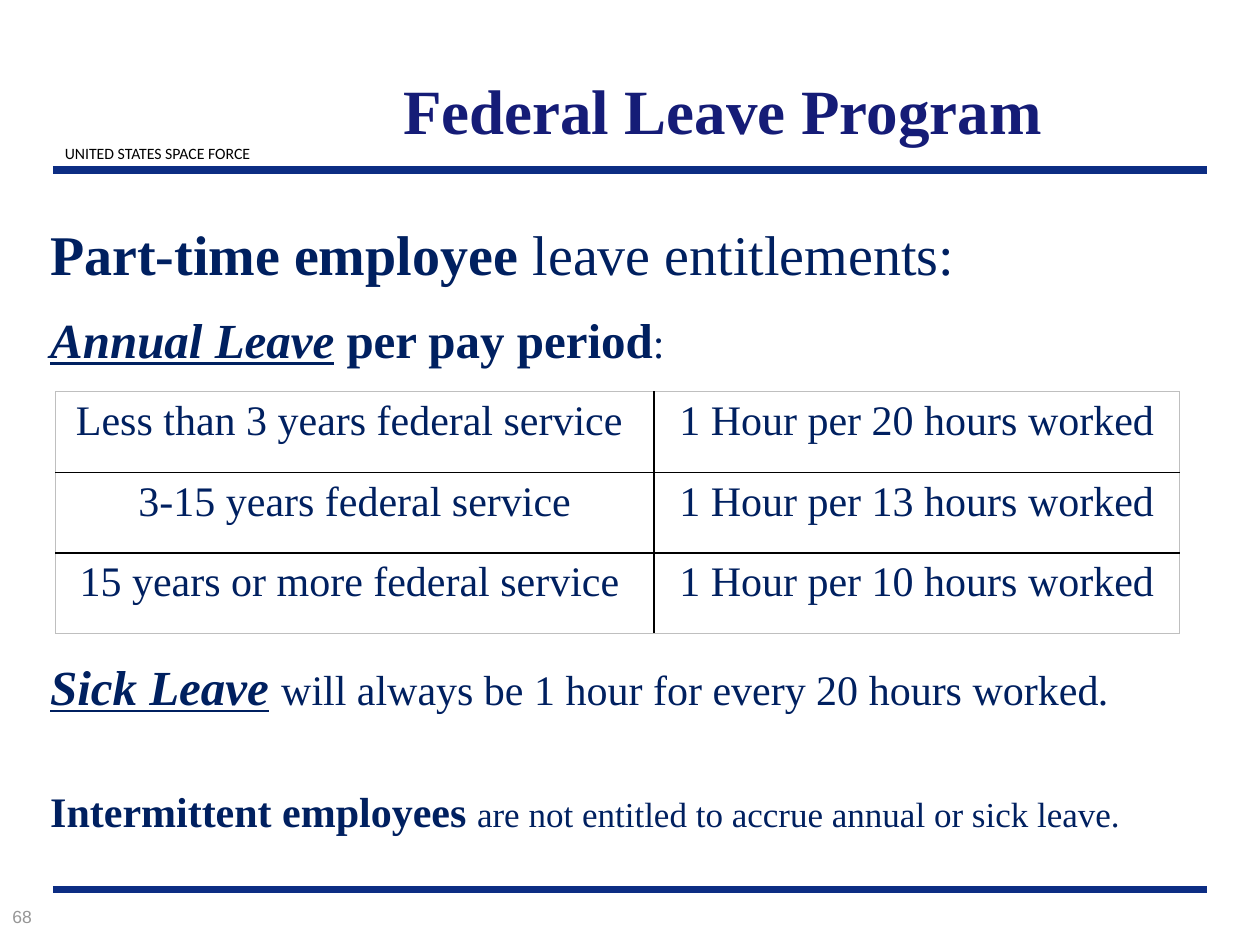
from dataclasses import dataclass

from lxml import etree
from pptx import Presentation
from pptx.dml.color import RGBColor
from pptx.enum.shapes import MSO_CONNECTOR
from pptx.enum.text import MSO_ANCHOR, PP_ALIGN
from pptx.oxml.ns import qn
from pptx.util import Inches, Pt


@dataclass(frozen=True)
class Theme:
    serif: str = "Times New Roman"
    label_font: str = "Calibri"
    number_font: str = "Arial"
    rule: str = "0C2D83"
    title: str = "151C77"
    body: str = "002060"
    black: str = "000000"
    grey: str = "969696"
    outer_border: str = "BFBFBF"
    title_size: int = 36
    lead_size: int = 32
    heading_size: int = 28
    text_size: int = 24
    note_size: int = 20
    number_size: int = 10
    label_size: int = 9


THEME = Theme()

LEAVE_RATES = [
    ("Less than 3 years federal service ", "1 Hour per 20 hours worked"),
    ("3-15 years federal service", "1 Hour per 13 hours worked"),
    ("15 years or more federal service ", "1 Hour per 10 hours worked"),
]

# Each paragraph: space before in points, then runs of (text, size, style letters).
BODY = [
    (0, [("Part-time employee ", THEME.lead_size, "b"),
         ("leave entitlements:", THEME.lead_size, "")]),
    (13, [("Annual Leave", THEME.heading_size, "biu"),
          (" ", THEME.heading_size, "bi"),
          ("per pay period", THEME.heading_size, "b"),
          (":", THEME.text_size, "")]),
    (165, [("Sick Leave", THEME.heading_size, "biu"),
           (" ", THEME.heading_size, "i"),
           ("will always be 1 hour for every 20 hours worked", THEME.text_size, ""),
           (".", THEME.text_size, "i")]),
    (40, [("Intermittent employees ", THEME.text_size, "b"),
          ("are not entitled to accrue annual or sick leave.", THEME.note_size, "")]),
]


def style_font(font, name, size, color, style=""):
    font.name = name
    font.size = Pt(size)
    font.color.rgb = RGBColor.from_string(color)
    font.bold = "b" in style
    font.italic = "i" in style
    font.underline = "u" in style


def add_rule(slide, y):
    line = slide.shapes.add_connector(
        MSO_CONNECTOR.STRAIGHT, Inches(0.42), Inches(y), Inches(9.58), Inches(y))
    line.line.color.rgb = RGBColor.from_string(THEME.rule)
    line.line.width = Pt(4.5)
    etree.SubElement(line._element.spPr, qn("a:effectLst"))


def add_title(slide, text):
    title = slide.shapes.title
    title.left, title.top = Inches(1.83), Inches(0.24)
    title.width, title.height = Inches(7.81), Inches(1.25)
    frame = title.text_frame
    frame.text = text
    frame.vertical_anchor = MSO_ANCHOR.MIDDLE
    paragraph = frame.paragraphs[0]
    paragraph.alignment = PP_ALIGN.CENTER
    style_font(paragraph.runs[0].font, THEME.serif, THEME.title_size, THEME.title, "b")


def add_text_frame(slide, left, top, width, height, wrap=True):
    box = slide.shapes.add_textbox(
        Inches(left), Inches(top), Inches(width), Inches(height))
    box.text_frame.word_wrap = wrap
    return box.text_frame


def add_label(slide, text, place, font, size, color, align=PP_ALIGN.LEFT, wrap=True):
    frame = add_text_frame(slide, *place, wrap=wrap)
    frame.text = text
    paragraph = frame.paragraphs[0]
    paragraph.alignment = align
    style_font(paragraph.runs[0].font, font, size, color)


def add_body(slide):
    frame = add_text_frame(slide, 0.3, 1.69, 9.18, 5.15)
    for index, (space, runs) in enumerate(BODY):
        paragraph = frame.add_paragraph() if index else frame.paragraphs[0]
        if space:
            paragraph.space_before = Pt(space)
        for text, size, style in runs:
            run = paragraph.add_run()
            run.text = text
            style_font(run.font, THEME.serif, size, THEME.body, style)


def set_borders(cell, colors):
    """Draw the left, right, top and bottom borders, in that order."""
    properties = cell._tc.get_or_add_tcPr()
    for index, (side, color) in enumerate(zip("LRTB", colors)):
        width = Pt(1 if color == THEME.black else 0.5)
        line = etree.Element(qn(f"a:ln{side}"), w=str(width))
        fill = etree.SubElement(line, qn("a:solidFill"))
        etree.SubElement(fill, qn("a:srgbClr"), val=color)
        properties.insert(index, line)


def add_rate_table(slide):
    row_count, column_count = len(LEAVE_RATES), len(LEAVE_RATES[0])
    table = slide.shapes.add_table(
        row_count, column_count,
        Inches(0.44), Inches(3.11), Inches(8.92), Inches(1.92)).table
    table.first_row = table.horz_banding = False
    for column, width in zip(table.columns, (4.75, 4.17)):
        column.width = Inches(width)
    for row, texts in enumerate(LEAVE_RATES):
        for column, text in enumerate(texts):
            cell = table.cell(row, column)
            cell.text = text
            cell.fill.background()
            paragraph = cell.text_frame.paragraphs[0]
            paragraph.alignment = PP_ALIGN.CENTER
            style_font(paragraph.runs[0].font, THEME.serif, THEME.text_size, THEME.body)
            at_edge = (column == 0, column == column_count - 1,
                       row == 0, row == row_count - 1)
            set_borders(cell, [THEME.outer_border if edge else THEME.black
                               for edge in at_edge])


def main():
    presentation = Presentation()
    presentation.slide_width, presentation.slide_height = Inches(10), Inches(7.5)
    slide = presentation.slides.add_slide(presentation.slide_layouts[5])
    for y in (7.06, 1.35):
        add_rule(slide, y)
    add_label(slide, "UNITED STATES SPACE FORCE", (0.3, 1.09, 1.9, 0.25),
              THEME.label_font, THEME.label_size, THEME.black, PP_ALIGN.CENTER, wrap=False)
    add_title(slide, "Federal Leave Program")
    add_body(slide)
    add_label(slide, "68", (0, 7.14, 1.33, 0.33),
              THEME.number_font, THEME.number_size, THEME.grey)
    add_rate_table(slide)
    presentation.save("out.pptx")


if __name__ == "__main__":
    main()
